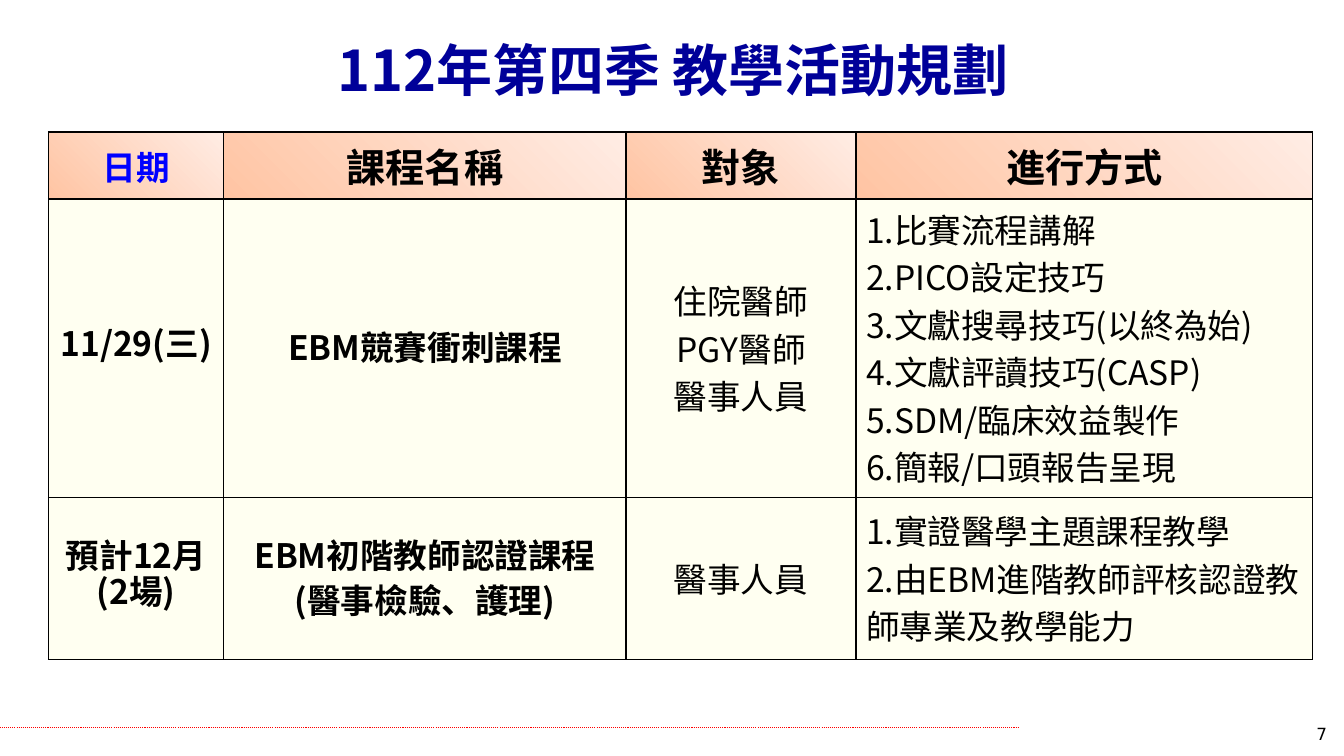
import pptx
import pptx.dml.color
import pptx.enum.shapes
import pptx.enum.dml
import pptx.enum.text
import pptx.oxml
import pptx.oxml.ns
import pptx.util
from lxml import etree

RGB = pptx.dml.color.RGBColor
Inches, Pt = pptx.util.Inches, pptx.util.Pt
ALIGN = pptx.enum.text.PP_ALIGN
ANCHOR = pptx.enum.text.MSO_ANCHOR
qn = pptx.oxml.ns.qn

# Content
TITLE = "112年第四季 教學活動規劃"
PAGE_NUMBER = "7"
HEADINGS = ["日期", "課程名稱", "對象", "進行方式"]
COURSES = [
    [["11/29(三)"],
     ["EBM競賽衝刺課程"],
     ["住院醫師", "PGY醫師", "醫事人員"],
     ["1.比賽流程講解\n2.PICO設定技巧\n3.文獻搜尋技巧(以終為始)\n"
      "4.文獻評讀技巧(CASP)\n5.SDM/臨床效益製作\n6.簡報/口頭報告呈現"]],
    [["預計12月", "(2場)"],
     ["EBM初階教師認證課程", "(醫事檢驗、護理)"],
     ["醫事人員"],
     ["1.實證醫學主題課程教學", "2.由EBM進階教師評核認證教師專業及教學能力"]],
]

# Format
FONT = "Noto Sans CJK SC"
NAVY, BLUE, BLACK = RGB(0, 0, 0x99), RGB(0, 0, 0xFF), RGB(0, 0, 0)
RED, CREAM = RGB(0xFF, 0, 0), RGB(0xFF, 0xFF, 0xCC)
PEACH, PALE_PEACH = RGB(0xFF, 0xC4, 0xA3), RGB(0xFF, 0xEC, 0xE4)
CREAM_OPACITY = 26
COLUMN_WIDTHS = [1.74, 3.99, 2.28, 4.53]
ROW_HEIGHTS = [0.62, 2.96, 1.61]
LINE_SPACINGS = [26, 32, 34, 34]
COLUMN_ALIGNS = [ALIGN.CENTER] * 3 + [ALIGN.LEFT]


def write(frame, lines, align, size, color, bold=False, spacing=None, font=FONT):
    """Fill a text frame with one paragraph per line."""
    for index, line in enumerate(lines):
        para = frame.paragraphs[0] if index == 0 else frame.add_paragraph()
        para.text = line
        para.alignment = align
        if spacing:
            para.line_spacing = Pt(spacing)
        for span in para.runs:
            for name, value in {"name": font, "size": Pt(size), "bold": bold}.items():
                setattr(span.font, name, value)
            span.font.color.rgb = color
            latin = span.font._element.find(qn("a:latin"))
            east_asian = etree.Element(qn("a:ea"), typeface=font)
            latin.addnext(east_asian)


def set_borders(cell, top, bottom):
    """Draw black cell edges, with widths in points."""
    properties = cell._tc.get_or_add_tcPr()
    edges = {"lnL": 1, "lnR": 1, "lnT": top, "lnB": bottom}
    for index, (edge, width) in enumerate(edges.items()):
        line = etree.Element(qn("a:" + edge), w=str(Pt(width)))
        fill = etree.SubElement(line, qn("a:solidFill"))
        etree.SubElement(fill, qn("a:srgbClr"), val=str(BLACK))
        properties.insert(index, line)


def fill_heading(cell):
    cell.fill.gradient()
    cell.fill.gradient_angle = 45
    for stop, color in zip(cell.fill.gradient_stops, (PEACH, PALE_PEACH)):
        stop.color.rgb = color


def fill_body(cell):
    cell.fill.solid()
    cell.fill.fore_color.rgb = CREAM
    color = cell._tc.tcPr.find(".//" + qn("a:srgbClr"))
    etree.SubElement(color, qn("a:alpha"), val=str(CREAM_OPACITY * 1000))


def add_title(page):
    title = page.shapes.title
    place = {"left": 0.02, "top": 0.3, "width": 13.31, "height": 0.77}
    for name, value in place.items():
        setattr(title, name, Inches(value))
    frame = title.text_frame
    frame.auto_size = pptx.enum.text.MSO_AUTO_SIZE.NONE
    frame.vertical_anchor = ANCHOR.MIDDLE
    write(frame, [TITLE], ALIGN.CENTER, 40, NAVY, bold=True)


def add_course_table(page):
    table = page.shapes.add_table(
        len(ROW_HEIGHTS), len(COLUMN_WIDTHS), Inches(0.48), Inches(1.31),
        Inches(sum(COLUMN_WIDTHS)), Inches(sum(ROW_HEIGHTS))).table
    table.first_row = table.horz_banding = False
    for column, width in zip(table.columns, COLUMN_WIDTHS):
        column.width = Inches(width)
    for row, height in zip(table.rows, ROW_HEIGHTS):
        row.height = Inches(height)

    # Heading row
    for index, heading in enumerate(HEADINGS):
        cell = table.cell(0, index)
        cell.vertical_anchor = ANCHOR.MIDDLE
        if index < 3:
            cell.margin_left = cell.margin_right = Inches(0.12)
            cell.margin_top = cell.margin_bottom = 0
        size, color = (24, BLUE) if index == 0 else (28, BLACK)
        write(cell.text_frame, [heading], ALIGN.CENTER, size, color, bold=True)
        fill_heading(cell)
        set_borders(cell, top=1, bottom=2)

    # Course rows
    for number, course in enumerate(COURSES, start=1):
        for index, lines in enumerate(course):
            cell = table.cell(number, index)
            cell.vertical_anchor = ANCHOR.MIDDLE
            write(cell.text_frame, lines, COLUMN_ALIGNS[index], 24, BLACK,
                  bold=index < 2, spacing=LINE_SPACINGS[index])
            fill_body(cell)
            set_borders(cell, top=2 if number == 1 else 1, bottom=1)


def add_footer(page):
    rule = page.shapes.add_connector(
        pptx.enum.shapes.MSO_CONNECTOR.STRAIGHT,
        0, Inches(7.22), Inches(10.11), Inches(7.22))
    rule.line.color.rgb = RED
    rule.line.width = Pt(0.75)
    rule.line.dash_style = pptx.enum.dml.MSO_LINE.ROUND_DOT
    etree.SubElement(rule._element.spPr, qn("a:effectLst"))
    box = page.shapes.add_textbox(
        Inches(10.37), Inches(7.13), Inches(2.89), Inches(0.52))
    box.text_frame.word_wrap = True
    write(box.text_frame, [PAGE_NUMBER], ALIGN.RIGHT, 12, BLACK, font="DejaVu Sans")


def main():
    deck = pptx.Presentation()
    deck.slide_width, deck.slide_height = Inches(13.33), Inches(7.5)
    page = deck.slides.add_slide(deck.slide_layouts[5])
    add_title(page)
    add_course_table(page)
    add_footer(page)
    deck.save("out.pptx")


if __name__ == "__main__":
    main()
